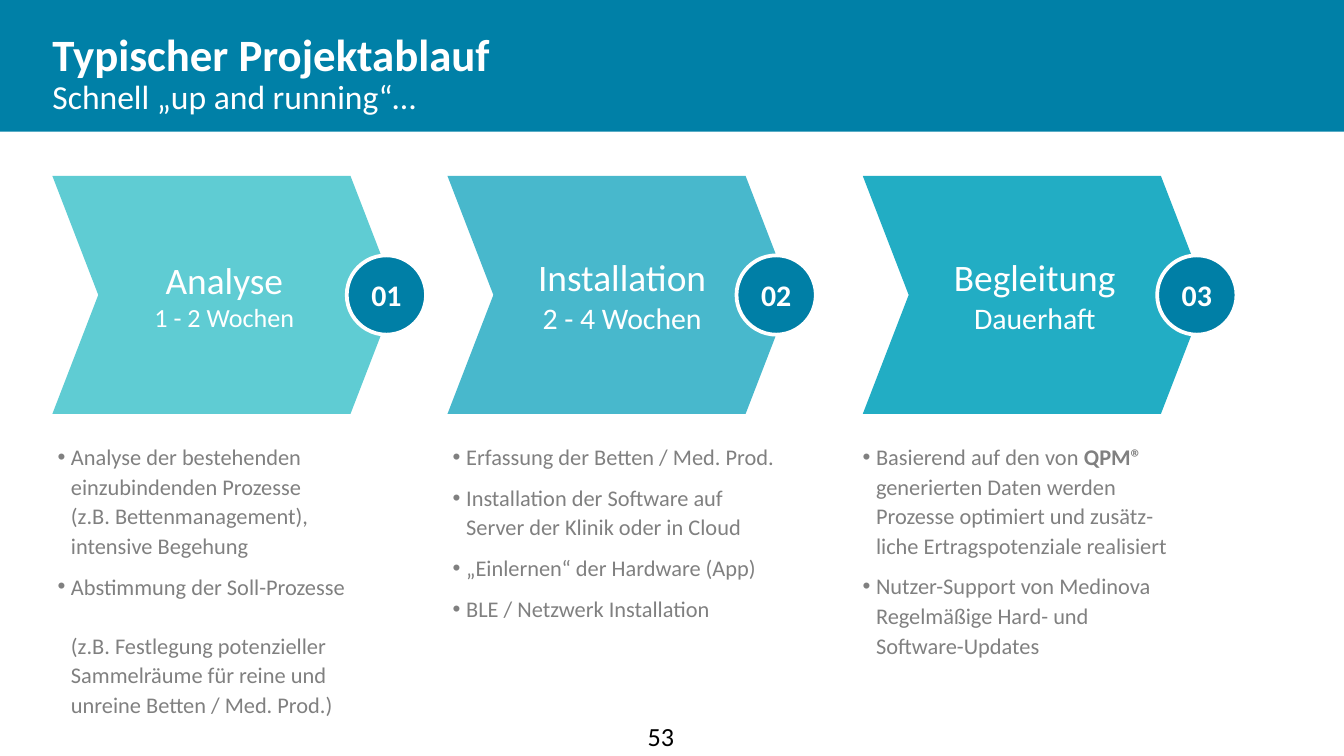
import copy

import pptx
import pptx.util
import pptx.dml.color
import pptx.enum.shapes
import pptx.enum.text
from lxml import etree

Inches = pptx.util.Inches
Pt = pptx.util.Pt
SHAPE = pptx.enum.shapes.MSO_SHAPE
ALIGN = pptx.enum.text.PP_ALIGN
ANCHOR = pptx.enum.text.MSO_ANCHOR

COLORS = {
    "banner": "0080A7", "badge": "007FA6", "white": "FFFFFF",
    "body": "808080", "number": "000000",
    "analyse": "5FCCD3", "installation": "48B8CC", "begleitung": "22ADC4",
}
FONT = "Calibri"

TITLE = "Typischer Projektablauf"
SUBTITLE = "Schnell „up and running“…"
PAGE_NUMBER = "53"

# A bullet is a string, or a list of (text, bold) parts.
PHASES = [
    {
        "name": "Analyse", "duration": "1 - 2 Wochen", "duration_size": 14,
        "fill": "analyse", "left": 0.39, "badge_left": 2.58,
        "margins": (0.1, 0.05, 0.1, 0.05),
        "bullets_left": 0.33, "bullets_width": 2.36, "bullets_height": 1.95,
        "bullets": [
            "Analyse der bestehenden \neinzubindenden Prozesse \n"
            "(z.B. Bettenmanagement),\nintensive Begehung",
            "Abstimmung der Soll-Prozesse \n(z.B. Festlegung potenzieller "
            "Sammelräume für reine und\nunreine Betten / Med. Prod.)",
        ],
    },
    {
        "name": "Installation", "duration": "2 - 4 Wochen", "duration_size": 16,
        "fill": "installation", "left": 3.33, "badge_left": 5.48,
        "margins": (0.08, 0.05, 0.04, 0.05),
        "bullets_left": 3.27, "bullets_width": 2.62, "bullets_height": 1.45,
        "bullets": [
            "Erfassung der Betten / Med. Prod.",
            "Installation der Software auf Server der Klinik oder in Cloud",
            "„Einlernen“ der Hardware (App)",
            "BLE / Netzwerk Installation",
        ],
    },
    {
        "name": "Begleitung", "duration": "Dauerhaft", "duration_size": 16,
        "fill": "begleitung", "left": 6.42, "badge_left": 8.61,
        "margins": (0.1, 0.05, 0.1, 0.05),
        "bullets_left": 6.32, "bullets_width": 2.56, "bullets_height": 1.73,
        "bullets": [
            [("Basierend auf den von ", False), ("QPM®", True),
             (" generierten Daten werden Prozesse optimiert und "
              "zusätz-liche Ertragspotenziale realisiert", False)],
            "Nutzer-Support von Medinova Regelmäßige Hard- und Software-Updates",
        ],
    },
]

SLIDE_WIDTH = Inches(10)
CHEVRON_TOP, CHEVRON_WIDTH, CHEVRON_HEIGHT = 1.31, 2.56, 1.77
BADGE_SIZE = 0.59
BADGE_TOP = CHEVRON_TOP + (CHEVRON_HEIGHT - BADGE_SIZE) / 2
BULLETS_TOP = 3.23


def rgb(name):
    return pptx.dml.color.RGBColor.from_string(COLORS[name])


def add_bullet_mark(paragraph, indent=0.1):
    properties = paragraph._p.get_or_add_pPr()
    properties.set("marL", str(Inches(indent)))
    properties.set("indent", str(-Inches(indent)))
    typeface = etree.SubElement(properties, pptx.oxml.ns.qn("a:buFont"))
    typeface.set("typeface", "Arial")
    mark = etree.SubElement(properties, pptx.oxml.ns.qn("a:buChar"))
    mark.set("char", "•")


def style(font, size, bold, color):
    font.name = FONT
    font.size = Pt(size)
    font.bold = bold
    font.color.rgb = rgb(color)


def add_break(paragraph, run):
    """Add a line break that keeps the format of the run before it."""
    paragraph.add_line_break()
    paragraph._p[-1].append(copy.deepcopy(run.font._element))


def write(frame, paragraphs, sizes, color="white", bold=False, align=ALIGN.LEFT,
          anchor=ANCHOR.MIDDLE, margins=(0, 0, 0, 0), bullets=False,
          line_spacing=None, space_after=0):
    """Fill a text frame; sizes holds one point size per paragraph."""
    frame.word_wrap = True
    frame.vertical_anchor = anchor
    (frame.margin_left, frame.margin_top,
     frame.margin_right, frame.margin_bottom) = map(Inches, margins)
    for index, (content, size) in enumerate(zip(paragraphs, sizes)):
        paragraph = frame.add_paragraph() if index else frame.paragraphs[0]
        if bullets:
            add_bullet_mark(paragraph)
        style(paragraph.font, size, bold, color)
        paragraph.alignment = align
        paragraph.space_after = Pt(space_after)
        if line_spacing:
            paragraph.line_spacing = line_spacing
        parts = [(content, bold)] if isinstance(content, str) else content
        for text, part_bold in parts:
            for number, line in enumerate(text.split("\n")):
                if number:
                    add_break(paragraph, run)
                run = paragraph.add_run()
                run.text = line
                style(run.font, size, part_bold, color)


def add_text(slide, box, paragraphs, sizes, **text_format):
    frame = slide.shapes.add_textbox(*map(Inches, box)).text_frame
    write(frame, paragraphs, sizes, **text_format)


def add_filled(slide, kind, box, fill, outline=None):
    shape = slide.shapes.add_shape(kind, *map(Inches, box))
    shape.shadow.inherit = False
    shape.fill.solid()
    shape.fill.fore_color.rgb = rgb(fill)
    if outline:
        shape.line.color.rgb = rgb(outline)
        shape.line.width = Pt(2)
    else:
        shape.line.fill.background()
    return shape


def add_phase(slide, number, phase):
    chevron = add_filled(
        slide, SHAPE.CHEVRON,
        (phase["left"], CHEVRON_TOP, CHEVRON_WIDTH, CHEVRON_HEIGHT), phase["fill"])
    chevron.adjustments[0] = 0.193
    write(chevron.text_frame, [phase["name"], phase["duration"]],
          [20, phase["duration_size"]], align=ALIGN.CENTER, margins=phase["margins"])

    badge = add_filled(
        slide, SHAPE.OVAL,
        (phase["badge_left"], BADGE_TOP, BADGE_SIZE, BADGE_SIZE), "badge", "white")
    write(badge.text_frame, [f"{number:02d}"], [16], bold=True,
          align=ALIGN.CENTER, margins=(0.04, 0.04, 0.04, 0.04))

    bullets = phase["bullets"]
    add_text(slide, (phase["bullets_left"], BULLETS_TOP,
                     phase["bullets_width"], phase["bullets_height"]),
             bullets, [12] * len(bullets), color="body", anchor=ANCHOR.TOP,
             margins=(0.1, 0.05, 0.1, 0.05), bullets=True,
             line_spacing=1.1, space_after=6)


def main():
    presentation = pptx.Presentation()
    presentation.slide_width = SLIDE_WIDTH
    presentation.slide_height = SLIDE_WIDTH * 9 // 16
    slide = presentation.slides.add_slide(presentation.slide_layouts[6])

    add_text(slide, (4.72, 5.31, 0.56, 0.34), [PAGE_NUMBER], [14], color="number",
             anchor=ANCHOR.TOP, margins=(0.1, 0.05, 0.1, 0.05))
    add_filled(slide, SHAPE.RECTANGLE, (0, 0, 10, 0.98), "banner")
    add_text(slide, (0.39, 0.2, 8.16, 0.39), [TITLE], [24], bold=True)
    add_text(slide, (0.39, 0.59, 8.19, 0.25), [SUBTITLE], [18])
    for number, phase in enumerate(PHASES, start=1):
        add_phase(slide, number, phase)

    presentation.save("out.pptx")


if __name__ == "__main__":
    main()
